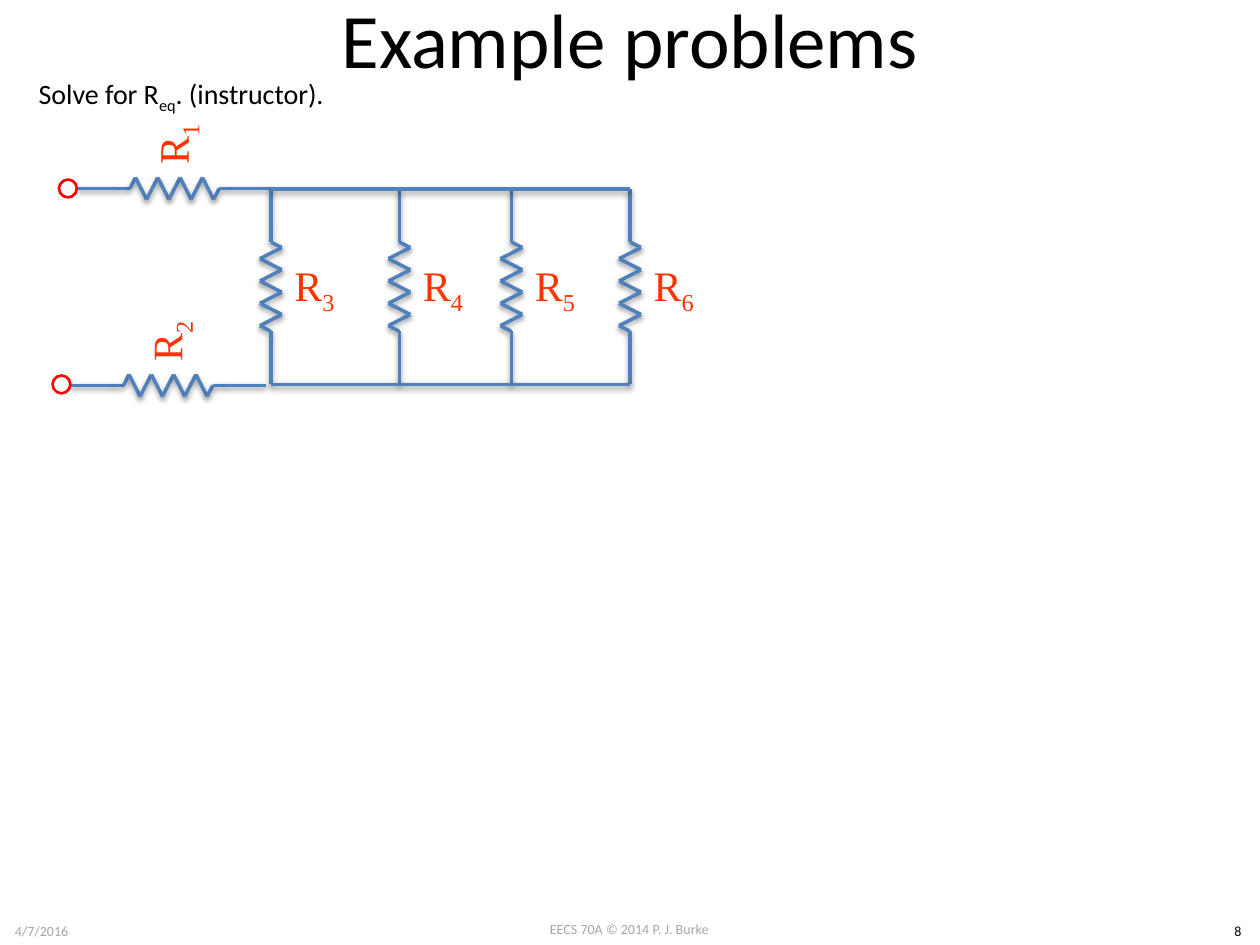
from dataclasses import dataclass
from itertools import pairwise

from lxml.etree import SubElement
from pptx import Presentation
from pptx.dml.color import RGBColor
from pptx.enum.shapes import MSO_CONNECTOR, MSO_SHAPE
from pptx.enum.text import MSO_ANCHOR, PP_ALIGN
from pptx.oxml.ns import qn
from pptx.util import Cm, Pt

WIRE = "4F81BD"
TERMINAL = "FF0000"
LABEL = "FF3300"
BLACK = "000000"
GREY = "A6A6A6"

TOP_RAIL = 3.81
BOTTOM_RAIL = 7.75
BRANCHES = {"3": 5.46, "4": 8.05, "5": 10.31, "6": 12.7}
LEFT_BRANCH, RIGHT_BRANCH = BRANCHES["3"], BRANCHES["6"]

SWING = 0.22
ZIGZAG = [(1.18 + 0.225 * step, SWING * (-1) ** step) for step in range(8)]
RESISTOR_TRACE = [(0, 0), (0.86, 0), (1.07, 0), *ZIGZAG, (2.87, 0), (3.1, 0), (3.94, 0)]
LABEL_ANCHOR = (1.99, 0.88)
LABEL_SIZE = (3.02, 1.85)


@dataclass
class Resistor:
    subscript: str
    x: float
    y: float
    upright: bool

    def locate(self, along: float, aside: float) -> tuple[float, float]:
        if self.upright:
            return self.x + aside, self.y + along
        return self.x + along, self.y - aside


@dataclass
class Caption:
    pieces: tuple[str, ...]
    box: tuple[float, float, float, float]
    size: float
    color: str
    align: PP_ALIGN = PP_ALIGN.CENTER
    anchor: MSO_ANCHOR = MSO_ANCHOR.TOP
    font: str = "Calibri"
    rotation: float = 0


def rgb(color: str) -> RGBColor:
    return RGBColor.from_string(color)


def place(shape, box: tuple[float, float, float, float]) -> None:
    shape.left, shape.top, shape.width, shape.height = map(Cm, box)


def write(shape, caption: Caption) -> None:
    frame = shape.text_frame
    frame.word_wrap = True
    frame.vertical_anchor = caption.anchor
    paragraph = frame.paragraphs[0]
    paragraph.text = caption.pieces[0]
    paragraph.alignment = caption.align
    for piece in caption.pieces[1:]:
        paragraph.add_run().text = piece
    for order, run in enumerate(paragraph.runs):
        run.font.name = caption.font
        run.font.size = Pt(caption.size)
        run.font.color.rgb = rgb(caption.color)
        if order % 2:
            run.font._element.set("baseline", "-25000")


def draw_caption(shapes, caption: Caption) -> None:
    text_box = shapes.add_textbox(*map(Cm, caption.box))
    text_box.rotation = caption.rotation
    write(text_box, caption)


def draw_wire(shapes, start: tuple[float, float], end: tuple[float, float]) -> None:
    wire = shapes.add_connector(MSO_CONNECTOR.STRAIGHT, *map(Cm, (*start, *end)))
    wire.line.color.rgb = rgb(WIRE)
    wire.line.width = Pt(2)
    effects = SubElement(wire._element.spPr, qn("a:effectLst"))
    shadow = SubElement(effects, qn("a:outerShdw"), blurRad="40000", dist="20000",
                        dir="5400000", rotWithShape="0")
    tint = SubElement(shadow, qn("a:srgbClr"), val=BLACK)
    SubElement(tint, qn("a:alpha"), val="38000")


def draw_resistor(shapes, resistor: Resistor) -> None:
    group = shapes.add_group_shape().shapes
    center_x, center_y = resistor.locate(*LABEL_ANCHOR)
    width, height = LABEL_SIZE
    draw_caption(group, Caption(
        ("R", resistor.subscript),
        (center_x - width / 2, center_y - height / 2, width, height),
        24, LABEL, anchor=MSO_ANCHOR.MIDDLE, font="Times New Roman",
        rotation=0 if resistor.upright else 270))
    corners = [resistor.locate(*point) for point in RESISTOR_TRACE]
    for start, end in pairwise(corners):
        draw_wire(group, start, end)


def draw_terminal(shapes, left: float, top: float) -> None:
    terminal = shapes.add_shape(MSO_SHAPE.OVAL, *map(Cm, (left, top, 0.36, 0.36)))
    terminal.shadow.inherit = False
    terminal.fill.background()
    terminal.line.color.rgb = rgb(TERMINAL)
    terminal.line.width = Pt(1.5)


def main() -> None:
    presentation = Presentation()
    presentation.slide_width, presentation.slide_height = Cm(25.4), Cm(19.05)
    slide = presentation.slides.add_slide(presentation.slide_layouts[5])
    shapes = slide.shapes

    heading = Caption(("Example problems",), (1.27, -0.84, 22.86, 3.18), 44, BLACK,
                      anchor=MSO_ANCHOR.MIDDLE)
    place(shapes.title, heading.box)
    write(shapes.title, heading)

    resistors = [Resistor("1", 1.55, 3.8, False), Resistor("2", 1.42, 7.77, False)]
    resistors += [Resistor(name, x, TOP_RAIL, True) for name, x in BRANCHES.items()]
    for resistor in resistors:
        draw_resistor(shapes, resistor)
    for rail in (TOP_RAIL, BOTTOM_RAIL):
        draw_wire(shapes, (LEFT_BRANCH, rail), (RIGHT_BRANCH, rail))
    draw_terminal(shapes, 1.19, 3.62)
    draw_terminal(shapes, 1.06, 7.57)

    captions = [
        Caption(("Solve for R", "eq", ". (instructor)."), (0.53, 1.42, 6.6, 0.94),
                16, BLACK, PP_ALIGN.LEFT),
        Caption(("4/7/2016",), (0.05, 18.47, 5.26, 0.58), 8, GREY, PP_ALIGN.LEFT,
                MSO_ANCHOR.MIDDLE),
        Caption(("EECS 70A © 2014 P. J. Burke",), (9.73, 18.44, 5.92, 0.6), 8, GREY),
        Caption(("8",), (24.51, 18.47, 0.89, 0.6), 8, BLACK),
    ]
    for caption in captions:
        draw_caption(shapes, caption)

    presentation.save("out.pptx")


if __name__ == "__main__":
    main()
